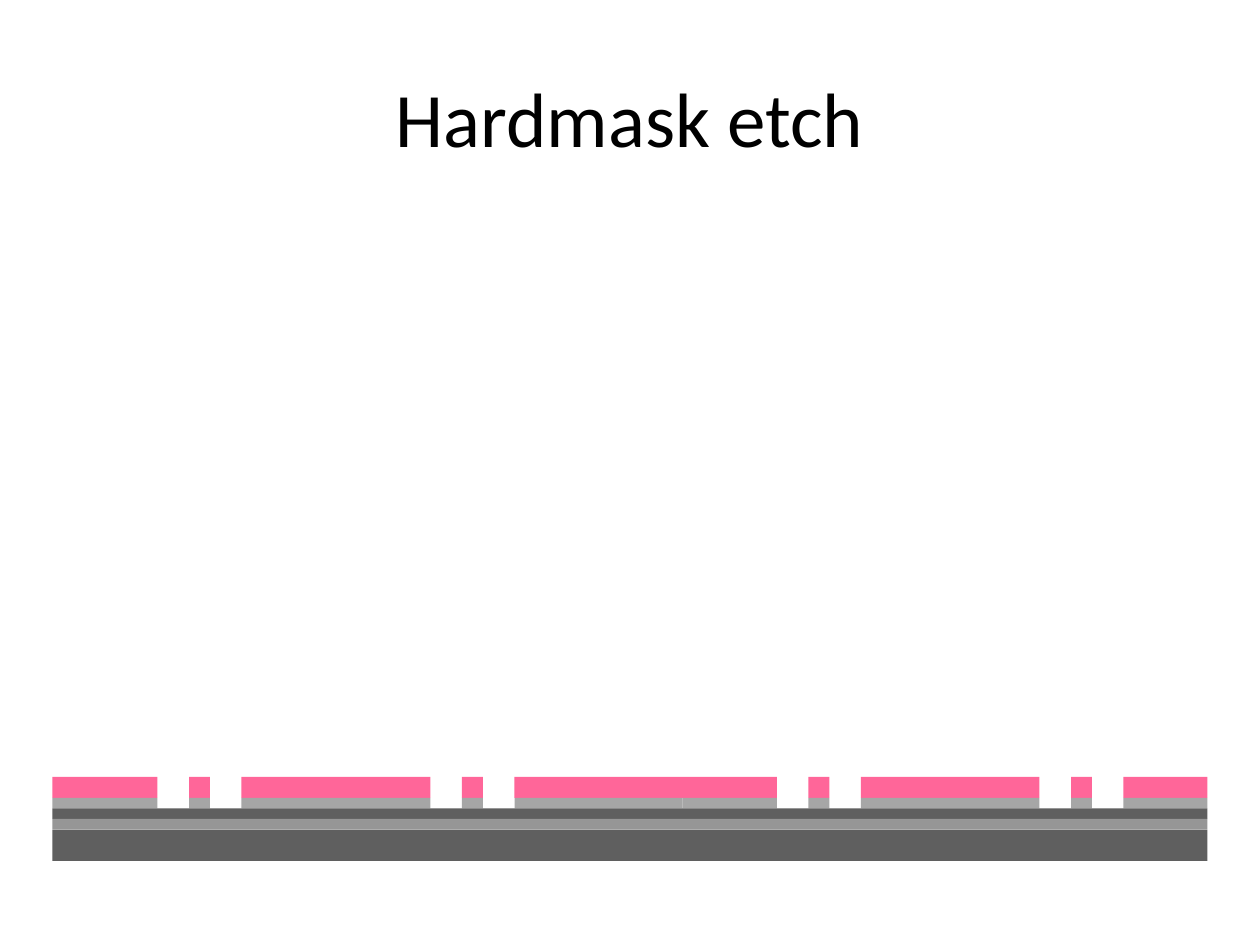
from dataclasses import dataclass

from pptx import Presentation
from pptx.dml.color import RGBColor
from pptx.enum.shapes import MSO_SHAPE
from pptx.enum.text import MSO_ANCHOR, PP_ALIGN
from pptx.util import Pt


@dataclass(frozen=True)
class Theme:
    font: str = "Calibri"
    title_size: int = 44
    text: str = "000000"
    resist: str = "FF6699"
    hardmask: str = "A6A6A6"
    silicon: str = "5F5F5F"
    oxide: str = "969696"


class SlideBuilder:
    def __init__(self, page, theme):
        self.page = page
        self.theme = theme

    def title(self, text, left, top, width, height):
        box = self.page.shapes.title
        box.left, box.top, box.width, box.height = map(Pt, (left, top, width, height))
        frame = box.text_frame
        frame.text = text
        frame.vertical_anchor = MSO_ANCHOR.MIDDLE
        para = frame.paragraphs[0]
        para.alignment = PP_ALIGN.CENTER
        font = para.runs[0].font
        font.name = self.theme.font
        font.size = Pt(self.theme.title_size)
        font.color.rgb = RGBColor.from_string(self.theme.text)

    def block(self, left, top, width, height, color):
        box = self.page.shapes.add_shape(
            MSO_SHAPE.RECTANGLE, Pt(left), Pt(top), Pt(width), Pt(height))
        box.shadow.inherit = False
        box.fill.solid()
        box.fill.fore_color.rgb = RGBColor.from_string(color)
        box.line.fill.background()

    def patterned_layer(self, left, top, height, islands, gap, color):
        """Draw islands a gap apart; the pieces of one island touch."""
        for pieces in islands:
            for width in pieces:
                self.block(left, top, width, height, color)
                left += width
            left += gap


STACK_LEFT, STACK_WIDTH = 30, 660
TRENCH = 18
HARDMASK_ISLANDS = [(60,), (12,), (108,), (12,), (96, 54), (12,), (102,), (12,), (48,)]
RESIST_ISLANDS = [(sum(pieces),) for pieces in HARDMASK_ISLANDS]


def main():
    theme = Theme()
    deck = Presentation()
    deck.slide_width, deck.slide_height = Pt(720), Pt(540)
    page = deck.slides.add_slide(deck.slide_layouts[5])
    builder = SlideBuilder(page, theme)
    builder.title("Hardmask etch", 36, 21.6, 648, 90)

    top = 444
    for islands, height, color in (
        (RESIST_ISLANDS, 12, theme.resist),
        (HARDMASK_ISLANDS, 6, theme.hardmask),
        ([(STACK_WIDTH,)], 6, theme.silicon),
        ([(STACK_WIDTH,)], 6, theme.oxide),
        ([(STACK_WIDTH,)], 18, theme.silicon),
    ):
        builder.patterned_layer(STACK_LEFT, top, height, islands, TRENCH, color)
        top += height

    deck.save("out.pptx")


if __name__ == "__main__":
    main()
